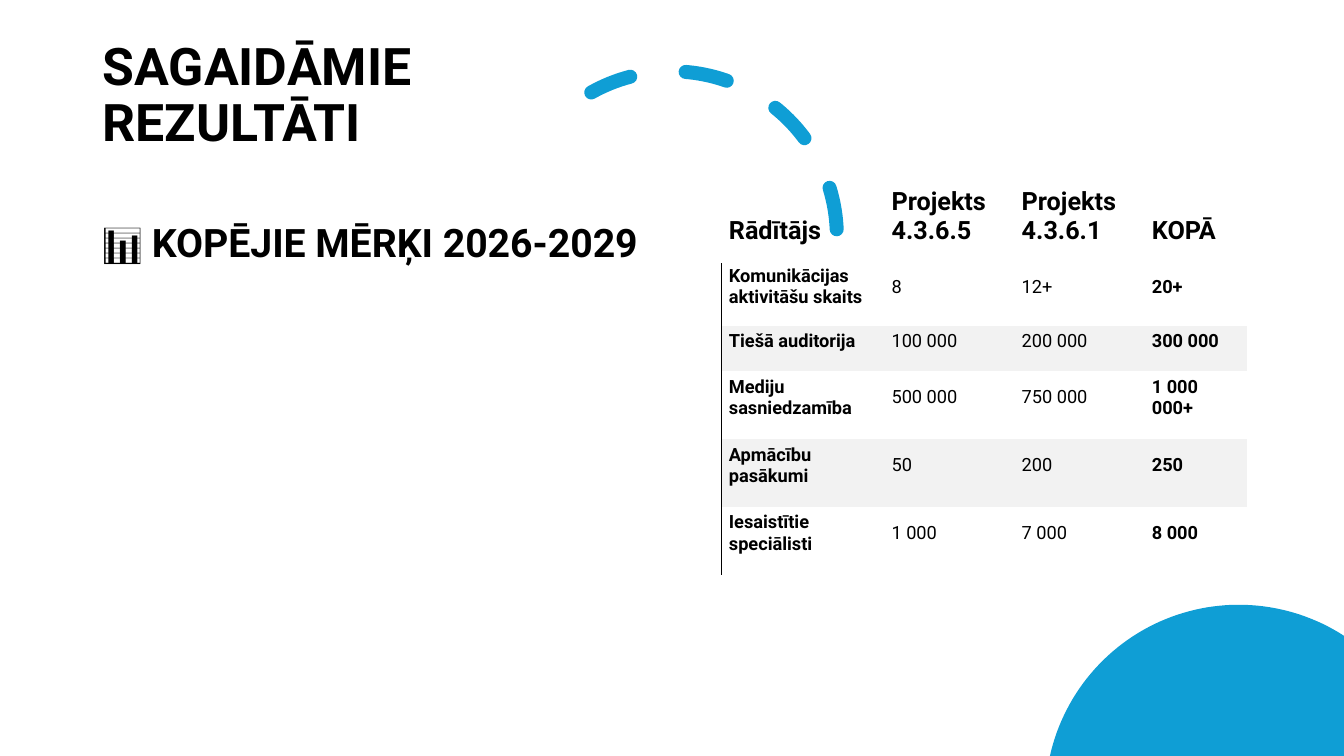
import math

import pptx
import pptx.dml.color
import pptx.enum.dml
import pptx.enum.shapes
import pptx.enum.text
import pptx.oxml
import pptx.oxml.ns
import pptx.util

Cm, Pt = pptx.util.Cm, pptx.util.Pt
RGB = pptx.dml.color.RGBColor.from_string
ANCHOR = pptx.enum.text.MSO_ANCHOR
COLORS = {"text": "000000", "accent": "0F9ED5", "band": "F2F2F2"}
SLIDE_W, SLIDE_H = 33.87, 19.05


def add_run(p, text, size, bold=True):
    r = p.add_run()
    r.text = text
    r.font.name = "Roboto"
    r.font.size = Pt(size)
    r.font.bold = bold
    r.font.color.rgb = RGB(COLORS["text"])


prs = pptx.Presentation()
prs.slide_width, prs.slide_height = Cm(SLIDE_W), Cm(SLIDE_H)
s = prs.slides.add_slide(prs.slide_layouts[6])

# Corner disc, cut off by the slide edges
cx, cy, radius = 31.22, 20.12, 4.88
start = math.pi - math.asin((cy - SLIDE_H) / radius)
end = math.acos((SLIDE_W - cx) / radius)
steps = 60
angles = [start + (end - start) * i / steps for i in range(steps + 1)]
rim = [(Cm(cx + radius * math.cos(a)), Cm(cy - radius * math.sin(a))) for a in angles]
fb = s.shapes.build_freeform(*rim[0])
fb.add_line_segments(rim[1:] + [(Cm(SLIDE_W), Cm(SLIDE_H))], close=True)
disc = fb.convert_to_shape()
disc.shadow.inherit = False
disc.fill.solid()
disc.fill.fore_color.rgb = RGB(COLORS["accent"])
disc.line.fill.background()

# Dashed arc with round caps
arc = s.shapes.add_shape(pptx.enum.shapes.MSO_SHAPE.ARC,
                         Cm(12.78), Cm(1.8), Cm(8.31), Cm(8.31))
arc.adjustments[0] = 144.418
arc.adjustments[1] = 0
arc.shadow.inherit = False
arc.fill.background()
arc.line.color.rgb = RGB(COLORS["accent"])
arc.line.width = Pt(10)
arc.line.dash_style = pptx.enum.dml.MSO_LINE.DASH
arc.line._get_or_add_ln().set("cap", "rnd")

# Title and subtitle: text, size, top, height, top inset, space before
for text, size, top, height, inset, before in [
    ("SAGAIDĀMIE REZULTĀTI", 37, 0.91, 4.09, 0.13, 0),
    ("📊 KOPĒJIE MĒRĶI 2026-2029", 28, 5.51, 11.63, 0.13, 10),
]:
    tf = s.shapes.add_textbox(Cm(2.34), Cm(top), Cm(14.6), Cm(height)).text_frame
    tf.word_wrap = True
    tf.vertical_anchor = ANCHOR.TOP
    tf.margin_top = Cm(inset)
    p = tf.paragraphs[0]
    p.line_spacing = 0.9
    p.space_before = Pt(before)
    add_run(p, text, size)

# Results table
rows = [
    ("Rādītājs", "Projekts 4.3.6.5", "Projekts 4.3.6.1", "KOPĀ"),
    ("Komunikācijas aktivitāšu skaits", "8", "12+", "20+"),
    ("Tiešā auditorija", "100 000", "200 000", "300 000"),
    ("Mediju sasniedzamība", "500 000", "750 000", "1 000 000+"),
    ("Apmācību pasākumi", "50", "200", "250"),
    ("Iesaistītie speciālisti", "1 000", "7 000", "8 000"),
]
col_widths = [4.1, 3.28, 3.28, 2.6]
row_heights = [2.08, 1.55, 1.14, 1.71, 1.71, 1.71]
table = s.shapes.add_table(len(rows), len(col_widths), Cm(18.17), Cm(4.55),
                           Cm(sum(col_widths)), Cm(sum(row_heights))).table
# Plain style without grid
style = table._tbl.tblPr.find(pptx.oxml.ns.qn("a:tableStyleId"))
style.text = "{2D5ABB26-0587-4C30-8999-92F81FD0307C}"
table.first_row = table.horz_banding = False
for col, width in zip(table.columns, col_widths):
    col.width = Cm(width)

left_border = (
    f'<a:lnL {pptx.oxml.ns.nsdecls("a")} w="9525"><a:solidFill>'
    f'<a:srgbClr val="{COLORS["text"]}"/></a:solidFill></a:lnL>'
)
for i, values in enumerate(rows):
    table.rows[i].height = Cm(row_heights[i])
    header = i == 0
    for j, value in enumerate(values):
        cell = table.cell(i, j)
        cell.margin_left, cell.margin_right = Cm(0.2), Cm(0.25)
        cell.margin_top, cell.margin_bottom = Cm(0.05), Cm(0.43)
        cell.vertical_anchor = ANCHOR.BOTTOM if header else ANCHOR.MIDDLE
        if i in (2, 4):
            cell.fill.solid()
            cell.fill.fore_color.rgb = RGB(COLORS["band"])
        else:
            cell.fill.background()
        if j == 0 and not header:
            cell._tc.get_or_add_tcPr().insert(0, pptx.oxml.parse_xml(left_border))
        add_run(cell.text_frame.paragraphs[0], value, 18 if header else 13,
                header or j in (0, 3))

prs.save("out.pptx")
